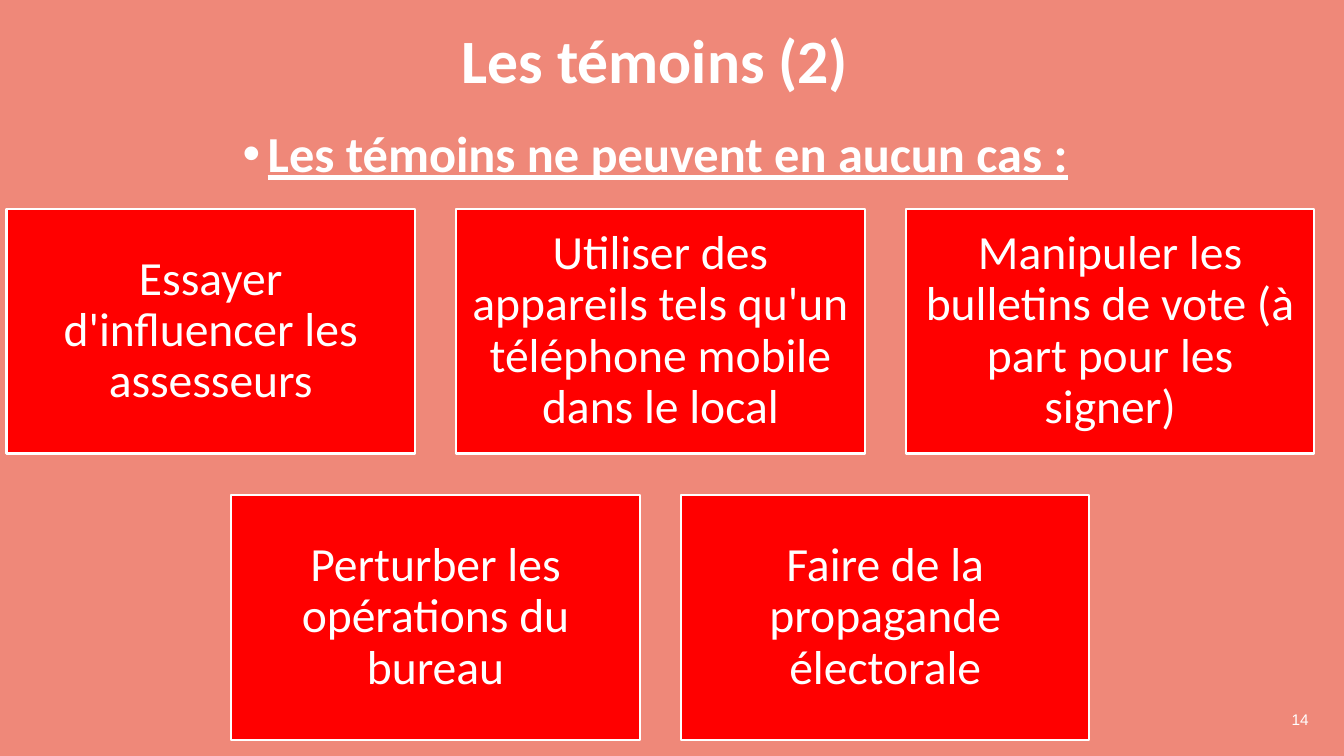
from lxml.etree import SubElement
from pptx import Presentation
from pptx.dml.color import RGBColor
from pptx.enum.shapes import MSO_SHAPE
from pptx.enum.text import MSO_ANCHOR, MSO_AUTO_SIZE, PP_ALIGN
from pptx.oxml.ns import qn
from pptx.util import Inches, Pt

TITLE = "Les témoins (2)"
RULE = "Les témoins ne peuvent en aucun cas :"
PROHIBITIONS = [
    [
        "Essayer d'influencer les assesseurs",
        "Utiliser des appareils tels qu'un téléphone mobile dans le local",
        "Manipuler les bulletins de vote (à part pour les signer)",
    ],
    [
        "Perturber les opérations du bureau",
        "Faire de la propagande électorale",
    ],
]
PAGE_NUMBER = "14"

COLORS = {"background": "EF8879", "card": "FF0000", "text": "FFFFFF"}
SLIDE_WIDTH, SLIDE_HEIGHT = 13.33, 7.5
CARD_WIDTH, CARD_HEIGHT, CARD_GAP = 4.05, 2.43, 0.41
GRID_CENTER, GRID_TOP = 6.55, 2.07
CARD_INSET = Inches(0.14)

TITLE_FORMAT = {"size": Pt(44), "name": "Calibri", "bold": True}
RULE_FORMAT = {"size": Pt(36), "name": "Calibri", "bold": True, "underline": True}
CARD_FORMAT = {"size": Pt(34), "name": "Calibri"}
NUMBER_FORMAT = {"size": Pt(11), "name": "Arial"}


def rgb(role):
    return RGBColor.from_string(COLORS[role])


def place(shape, left, top, width, height):
    shape.left, shape.top = Inches(left), Inches(top)
    shape.width, shape.height = Inches(width), Inches(height)


def write(shape, text, font_format, anchor, align=PP_ALIGN.CENTER, spacing=0.9):
    """Fill a shape with one formatted paragraph and return that paragraph."""
    frame = shape.text_frame
    frame.word_wrap = True
    frame.auto_size = MSO_AUTO_SIZE.NONE
    frame.vertical_anchor = anchor
    paragraph = frame.paragraphs[0]
    paragraph.alignment = align
    paragraph.line_spacing = spacing
    paragraph.space_before = Pt(0)
    run = paragraph.add_run()
    run.text = text
    for attribute, value in font_format.items():
        setattr(run.font, attribute, value)
    run.font.color.rgb = rgb("text")
    return paragraph


def add_bullet(paragraph, indent):
    properties = paragraph._p.get_or_add_pPr()
    properties.set("marL", str(indent))
    properties.set("indent", str(-indent))
    SubElement(properties, qn("a:buFont"), typeface="Arial")
    SubElement(properties, qn("a:buChar"), char="•")


def add_card(slide, text, left, top):
    card = slide.shapes.add_shape(
        MSO_SHAPE.RECTANGLE,
        Inches(left), Inches(top), Inches(CARD_WIDTH), Inches(CARD_HEIGHT),
    )
    card.shadow.inherit = False
    card.fill.solid()
    card.fill.fore_color.rgb = rgb("card")
    card.line.color.rgb = rgb("text")
    card.line.width = Pt(1.5)
    for side in ("left", "top", "right", "bottom"):
        setattr(card.text_frame, f"margin_{side}", CARD_INSET)
    write(card, text, CARD_FORMAT, MSO_ANCHOR.MIDDLE)


def main():
    presentation = Presentation()
    presentation.slide_width = Inches(SLIDE_WIDTH)
    presentation.slide_height = Inches(SLIDE_HEIGHT)
    slide = presentation.slides.add_slide(presentation.slide_layouts[1])
    slide.background.fill.solid()
    slide.background.fill.fore_color.rgb = rgb("background")

    title, rule = slide.placeholders
    place(title, 4.25, 0, 4.5, 1)
    write(title, TITLE, TITLE_FORMAT, MSO_ANCHOR.BOTTOM, spacing=Pt(44))
    place(rule, -0.16, 1.02, 13.32, 0.85)
    add_bullet(write(rule, RULE, RULE_FORMAT, MSO_ANCHOR.BOTTOM), Inches(0.25))

    for row, texts in enumerate(PROHIBITIONS):
        row_width = len(texts) * (CARD_WIDTH + CARD_GAP) - CARD_GAP
        row_left = GRID_CENTER - row_width / 2
        top = GRID_TOP + row * (CARD_HEIGHT + CARD_GAP)
        for column, text in enumerate(texts):
            add_card(slide, text, row_left + column * (CARD_WIDTH + CARD_GAP), top)

    page_number = slide.shapes.add_textbox(
        Inches(10.08), Inches(6.94), Inches(3), Inches(0.4)
    )
    write(page_number, PAGE_NUMBER, NUMBER_FORMAT, MSO_ANCHOR.MIDDLE,
          PP_ALIGN.RIGHT, spacing=1.0)

    presentation.save("out.pptx")


if __name__ == "__main__":
    main()
